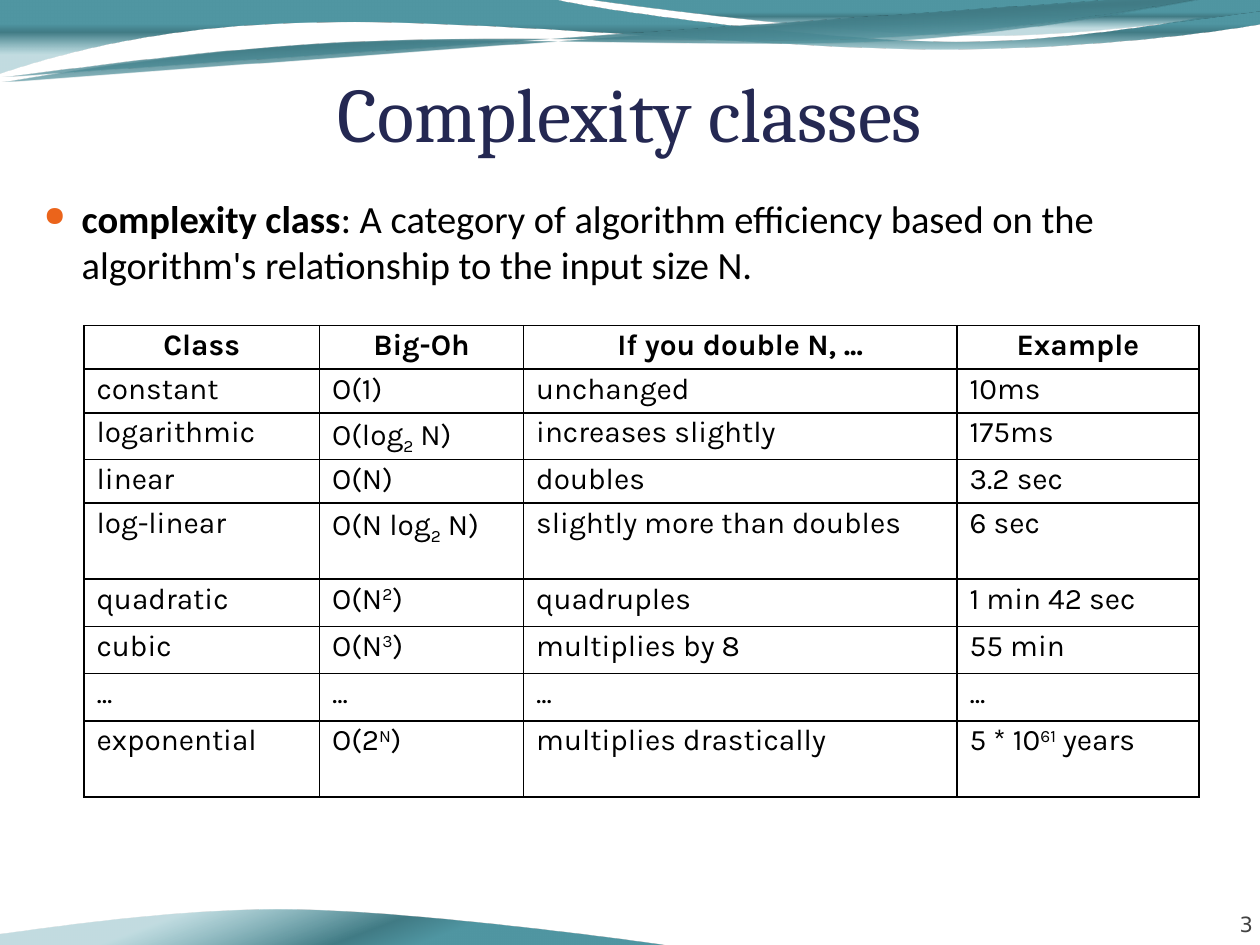
import math
from typing import NamedTuple

import pptx
import pptx.dml.color
import pptx.enum.text
import pptx.oxml
import pptx.oxml.ns
import pptx.util
from pptx.util import Pt

ALIGN = pptx.enum.text.PP_ALIGN
ANCHOR = pptx.enum.text.MSO_ANCHOR
NS = pptx.oxml.ns.nsdecls("a")


class Theme(NamedTuple):
    title_color: str = "242852"
    text_color: str = "000000"
    number_color: str = "424242"
    bullet_color: str = "EB641B"
    # position %, colour, opacity %
    wave_stops: tuple = ((33, "5096A2", 100), (44, "417B85", 100), (74, "5AA2AE", 37))
    title_size: float = 44
    body_size: float = 22
    table_size: float = 17
    number_size: float = 12
    bullet_percent: int = 72
    title_font: str = "Cambria"
    body_font: str = "Calibri"
    table_font: str = "Karla"
    number_font: str = "DejaVu Sans"


class Run(NamedTuple):
    text: str
    bold: bool = False
    baseline: int = 0


class Wave(NamedTuple):
    """Outline in points: pairs are line ends, six numbers are a Bezier curve."""
    start: tuple
    steps: tuple
    centre: tuple = (0, 0)
    rotation: float = 0
    angle: int = 90
    closed: bool = True


T = Theme()

WAVES = (
    Wave((0, 0), (
        (316.8, 0),
        (342.7, 6.5, 478.1, 23.8, 545.8, 23.8),
        (614.2, 23.8, 689.8, 10.1, 720, 3.6),
        (720.7, 13.7),
        (707.8, 16.6, 626.4, 28.1, 537.1, 28.1),
        (447.8, 28.1, 275, 10.8, 185, 13),
        (92.9, 13.7, 33.1, 31, -0.7, 41.8),
        (0, 0))),
    Wave((336.2, 0), (
        (358.6, 3.6, 485.3, 19.4, 549.4, 20.2),
        (613.4, 21.6, 691.9, 10.1, 720, 6.5),
        (720, 0),
        (336.2, 0))),
    Wave((0.7, 46.8), (
        (36, 41, 115.2, 28.1, 200.9, 24.5),
        (286.6, 20.2, 427, 28.1, 514.1, 23),
        (600.5, 18, 677.5, 0, 720, -5.8)), (360.7, 21.6), -2.7, closed=False),
    Wave((0.7, 43.9), (
        (35.3, 40.3, 119.5, 27.4, 205.2, 23.8),
        (290.9, 19.4, 429.8, 25.9, 515.5, 20.9),
        (601.9, 15.8, 677.5, -0.7, 720, -5.8)), (360.4, 20.5), -2.7, closed=False),
    Wave((383, 540), (
        (360.7, 536.4, 234, 520.6, 169.9, 519.8),
        (105.8, 518.4, 27.4, 529.9, -0.7, 533.5),
        (-0.7, 540),
        (383, 540)), (191.2, 529.2), 180, 70),
)

COL_WIDTHS = (134.6, 116.6, 247.7, 138.2)
ROW_HEIGHTS = (24.9,) * 4 + (43.5,) + (27,) * 3 + (43.5,)
HEADER = ("Class", "Big-Oh", "If you double N, ...", "Example")
# A tuple in place of a string holds text, raised or lowered text, text, baseline
ROWS = (
    ("constant", "O(1)", "unchanged", "10ms"),
    ("logarithmic", ("O(log", "2", " N)", -25), "increases slightly", "175ms"),
    ("linear", "O(N)", "doubles", "3.2 sec"),
    ("log-linear", ("O(N log", "2", " N)", -25), "slightly more than doubles", "6 sec"),
    ("quadratic", ("O(N", "2", ")", 30), "quadruples", "1 min 42 sec"),
    ("cubic", ("O(N", "3", ")", 30), "multiplies by 8", "55 min"),
    ("...",) * 4,
    ("exponential", ("O(2", "N", ")", 30), "multiplies drastically",
     ("5 * 10", "61", " years", 30)),
)


def unrotated(wave: Wave) -> list:
    """All line ends and control points, without the rotation of the shape."""
    pts = [wave.start]
    for step in wave.steps:
        pts += zip(step[::2], step[1::2])
    a = math.radians(-wave.rotation)
    cx, cy = wave.centre
    return [(Pt(cx + (x - cx) * math.cos(a) - (y - cy) * math.sin(a)),
             Pt(cy + (x - cx) * math.sin(a) + (y - cy) * math.cos(a))) for x, y in pts]


def add_wave(s, wave: Wave) -> None:
    pts = unrotated(wave)
    builder = s.shapes.build_freeform(*pts[0], scale=1.0)
    builder.add_line_segments(pts[1:], close=wave.closed)
    sp = builder.convert_to_shape()
    sp.rotation = wave.rotation
    sp.shadow.inherit = False
    sp.line.fill.background()

    # Join each group of three segments that stands for a curve
    geometry = sp.element.spPr.find(pptx.oxml.ns.qn("a:custGeom"))
    segments = iter(list(geometry.iter(pptx.oxml.ns.qn("a:lnTo"))))
    for step in wave.steps:
        first = next(segments)
        if len(step) == 6:
            curve = pptx.oxml.parse_xml(f"<a:cubicBezTo {NS}/>")
            first.addprevious(curve)
            for segment in (first, next(segments), next(segments)):
                curve.append(segment[0])
                segment.getparent().remove(segment)

    stops = "".join(
        f'<a:gs pos="{pos * 1000}"><a:srgbClr val="{color}">'
        f'<a:alpha val="{alpha * 1000}"/></a:srgbClr></a:gs>'
        for pos, color, alpha in T.wave_stops)
    geometry.addnext(pptx.oxml.parse_xml(
        f'<a:gradFill {NS} rotWithShape="1"><a:gsLst>{stops}</a:gsLst>'
        f'<a:lin ang="{wave.angle * 60000}" scaled="0"/></a:gradFill>'))


def add_runs(p, runs: list, font: str, size: float, color: str) -> None:
    for run in runs:
        r = p.add_run()
        r.text = run.text
        r.font.name = font
        r.font.size = Pt(size)
        r.font.bold = run.bold
        r.font.color.rgb = pptx.dml.color.RGBColor.from_string(color)
        if run.baseline:
            r.font._element.set("baseline", str(run.baseline * 1000))


def add_text(s, box: tuple, insets: tuple, anchor, align):
    """Add an empty wrapped text box and return its first paragraph."""
    tf = s.shapes.add_textbox(*map(Pt, box)).text_frame
    tf.word_wrap = True
    tf.vertical_anchor = anchor
    tf.margin_left, tf.margin_top, tf.margin_right, tf.margin_bottom = map(Pt, insets)
    p = tf.paragraphs[0]
    p.alignment = align
    return p


def add_bullet(p) -> None:
    pPr = p._p.get_or_add_pPr()
    pPr.set("marL", str(Pt(21.6)))
    pPr.set("indent", str(-Pt(21.6)))
    for xml in (f'<a:buClr {NS}><a:srgbClr val="{T.bullet_color}"/></a:buClr>',
                f'<a:buSzPct {NS} val="{T.bullet_percent * 1000}"/>',
                f'<a:buChar {NS} char="●"/>'):
        pPr.append(pptx.oxml.parse_xml(xml))


def fill_cell(cell, content, header: bool) -> None:
    cell.margin_left = cell.margin_right = Pt(7.2)
    cell.margin_top = cell.margin_bottom = Pt(2.9)
    p = cell.text_frame.paragraphs[0]
    p.alignment = ALIGN.CENTER if header else ALIGN.LEFT
    p.line_spacing = 0.9
    if isinstance(content, str):
        runs = [Run(content, header)]
    else:
        before, script, after, baseline = content
        runs = [Run(before), Run(script, baseline=baseline), Run(after)]
    add_runs(p, runs, T.table_font, T.table_size, T.text_color)
    tcPr = cell._tc.get_or_add_tcPr()
    for side in ("lnL", "lnR", "lnT", "lnB"):
        tcPr.append(pptx.oxml.parse_xml(
            f'<a:{side} {NS} w="{Pt(1)}"><a:solidFill><a:srgbClr val="{T.text_color}"/>'
            f'</a:solidFill></a:{side}>'))
    cell.fill.background()


def add_class_table(s) -> None:
    frame = s.shapes.add_table(len(ROW_HEIGHTS), len(COL_WIDTHS), Pt(48), Pt(186.1),
                               Pt(sum(COL_WIDTHS)), Pt(sum(ROW_HEIGHTS)))
    table = frame.table
    table.horz_banding = False
    for col, width in zip(table.columns, COL_WIDTHS):
        col.width = Pt(width)
    for i, (height, row) in enumerate(zip(ROW_HEIGHTS, (HEADER,) + ROWS)):
        table.rows[i].height = Pt(height)
        for j, content in enumerate(row):
            fill_cell(table.cell(i, j), content, header=i == 0)


def main() -> None:
    prs = pptx.Presentation()
    prs.slide_width, prs.slide_height = Pt(720), Pt(540)
    s = prs.slides.add_slide(prs.slide_layouts[6])

    # Slide number and wave decoration
    p = add_text(s, (656, 506, 60, 29), (0, 0, 0, 0), ANCHOR.BOTTOM, ALIGN.RIGHT)
    add_runs(p, [Run("3")], T.number_font, T.number_size, T.number_color)
    for wave in WAVES:
        add_wave(s, wave)

    # Title
    p = add_text(s, (36, 34.6, 648, 55.4), (0, 3.6, 0, 0), ANCHOR.BOTTOM, ALIGN.CENTER)
    add_runs(p, [Run("Complexity classes")], T.title_font, T.title_size, T.title_color)

    # Definition
    p = add_text(s, (18, 108, 702, 408), (7.2, 3.6, 7.2, 3.6), ANCHOR.TOP, ALIGN.LEFT)
    add_bullet(p)
    add_runs(p, [Run("complexity class", bold=True),
                 Run(": A category of algorithm efficiency based on the "
                     "algorithm's relationship to the input size N.")],
             T.body_font, T.body_size, T.text_color)

    # Table of complexity classes
    add_class_table(s)
    prs.save("out.pptx")


if __name__ == "__main__":
    main()
